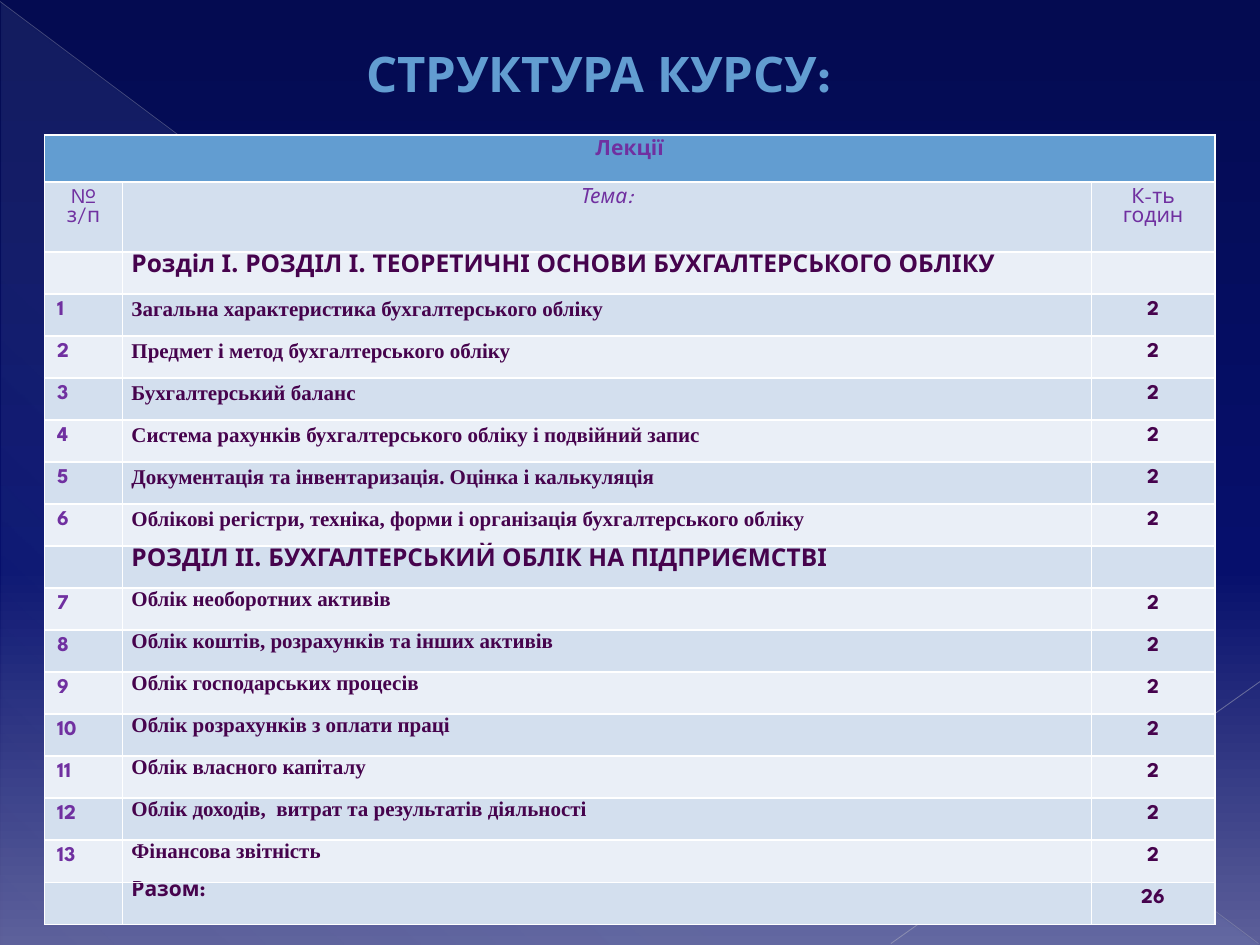
from dataclasses import dataclass
from typing import NamedTuple

from lxml.etree import SubElement
from pptx import Presentation
from pptx.dml.color import RGBColor
from pptx.enum.shapes import MSO_CONNECTOR, MSO_SHAPE
from pptx.enum.text import MSO_ANCHOR, MSO_AUTO_SIZE, PP_ALIGN
from pptx.oxml.ns import qn
from pptx.util import Cm, Pt


@dataclass(frozen=True)
class Theme:
    heading_font: str = "League Spartan"
    topic_font: str = "Times New Roman"
    title_size: float = 28
    section_size: float = 14
    body_size: float = 12
    accent: str = "629DD1"
    label: str = "7030A0"
    ink: str = "46034D"
    band_dark: str = "D3DFEE"
    band_light: str = "EAEFF7"
    border: str = "FFFFFF"


class Stop(NamedTuple):
    position: int
    color: str
    opacity: int = 100


class Ray(NamedTuple):
    start: tuple[float, float]
    end: tuple[float, float]
    color: str
    width: float
    opacity: int


class Lecture(NamedTuple):
    number: str
    topic: str
    hours: str = "2"


THEME = Theme()
SECTION_ONE = "Розділ І. РОЗДІЛ І. ТЕОРЕТИЧНІ ОСНОВИ БУХГАЛТЕРСЬКОГО ОБЛІКУ"
SECTION_TWO = "РОЗДІЛ ІІ. БУХГАЛТЕРСЬКИЙ ОБЛІК НА ПІДПРИЄМСТВІ"
TOPICS_ONE = [
    "Загальна характеристика бухгалтерського обліку",
    "Предмет і метод бухгалтерського обліку",
    "Бухгалтерський баланс",
    "Система рахунків бухгалтерського обліку і подвійний запис",
    "Документація та інвентаризація. Оцінка і калькуляція",
    "Облікові регістри, техніка, форми і організація бухгалтерського обліку",
]
TOPICS_TWO = [
    "Облік необоротних активів",
    "Облік коштів, розрахунків та інших активів",
    "Облік господарських процесів",
    "Облік розрахунків з оплати праці",
    "Облік власного капіталу",
    "Облік доходів,  витрат та результатів діяльності",
    "Фінансова звітність",
]
BACKDROP = [Stop(0, "040B51"), Stop(60, "060F6C"), Stop(100, "5C5F99")]
GLOW = [Stop(0, "ACCBF9", 10), Stop(70, "ACCBF9", 8), Stop(100, "ACCBF9", 1)]
RAYS = [
    Ray((0, 0.03), (25.37, 19.02), "B2B3BE", 0.39, 35),
    Ray((25.4, 13.74), (17.96, 19.02), "BBBCC5", 0.47, 45),
]
COLUMN_WIDTHS = [1.57, 19.53, 2.49]
HEADER_HEIGHTS = [0.95, 1.41]
TABLE_HEIGHT = 15.92


def write(frame, text: str, *, size: float = THEME.body_size, color: str = THEME.ink,
          font: str = THEME.heading_font, bold: bool = True, italic: bool = False,
          align=PP_ALIGN.LEFT, spacing: float | None = None) -> None:
    para = frame.paragraphs[0]
    para.alignment = align
    para.line_spacing = spacing
    span = para.add_run()
    span.text = text
    span.font.name, span.font.size = font, Pt(size)
    span.font.bold, span.font.italic = bold, italic
    span.font.color.rgb = RGBColor.from_string(color)


def add_alpha(color_element, opacity: int) -> None:
    SubElement(color_element, qn("a:alpha"), val=str(opacity * 1000))


def paint_gradient(owner, fill, stops: list[Stop], angle: int) -> None:
    """Give the fill found inside the owner element any number of stops."""
    fill.gradient()
    gradient = next(owner.iter(qn("a:gradFill")))
    stop_list = gradient.find(qn("a:gsLst"))
    for old_stop in list(stop_list):
        stop_list.remove(old_stop)
    for stop in stops:
        node = SubElement(stop_list, qn("a:gs"), pos=str(stop.position * 1000))
        color = SubElement(node, qn("a:srgbClr"), val=stop.color)
        if stop.opacity < 100:
            add_alpha(color, stop.opacity)
    gradient.find(qn("a:lin")).set("ang", str(angle * 60000))


def draw_backdrop(page) -> None:
    paint_gradient(page._element, page.background.fill, BACKDROP, 90)
    triangle = page.shapes.add_shape(
        MSO_SHAPE.RIGHT_TRIANGLE, Cm(0.03), Cm(0.05), Cm(25.35), Cm(19))
    triangle.shadow.inherit = False
    triangle.line.fill.background()
    paint_gradient(triangle._element.spPr, triangle.fill, GLOW, 133)
    for ray in RAYS:
        line = page.shapes.add_connector(
            MSO_CONNECTOR.STRAIGHT, *map(Cm, ray.start + ray.end))
        line.line.width = Pt(ray.width)
        line.line.color.rgb = RGBColor.from_string(ray.color)
        add_alpha(next(line._element.spPr.iter(qn("a:srgbClr"))), ray.opacity)
        SubElement(line._element.spPr, qn("a:effectLst"))


def draw_title(page) -> None:
    title = page.shapes.title
    title.left, title.top, title.width, title.height = Cm(5.72), Cm(0.74), Cm(12.7), Cm(1.45)
    frame = title.text_frame
    frame.auto_size = MSO_AUTO_SIZE.NONE
    frame.vertical_anchor = MSO_ANCHOR.BOTTOM
    write(frame, "СТРУКТУРА КУРСУ:", size=THEME.title_size, color=THEME.accent,
          align=PP_ALIGN.CENTER)
    page.shapes._spTree.append(title._element)


def style_cell(cell, fill: str) -> None:
    properties = cell._tc.get_or_add_tcPr()
    for side in ("lnL", "lnR", "lnT", "lnB"):
        border = SubElement(properties, qn(f"a:{side}"), w=str(Pt(1)))
        SubElement(SubElement(border, qn("a:solidFill")), qn("a:srgbClr"), val=THEME.border)
    cell.fill.solid()
    cell.fill.fore_color.rgb = RGBColor.from_string(fill)


def set_margins(cell, side: float) -> None:
    cell.margin_left = cell.margin_right = Cm(side)
    cell.margin_top = cell.margin_bottom = 0


def fill_row(cells, lecture: Lecture, **topic_format) -> None:
    number, topic, hours = cells
    set_margins(topic, 0.18)
    write(topic.text_frame, lecture.topic, **topic_format)
    for cell, text, color, align in (
            (number, lecture.number, THEME.label, PP_ALIGN.LEFT),
            (hours, lecture.hours, THEME.ink, PP_ALIGN.CENTER)):
        if text:
            write(cell.text_frame, text, color=color, align=align)
        else:
            set_margins(cell, 0)


def draw_table(page) -> None:
    section = dict(size=THEME.section_size, spacing=1.15)
    rows = [(Lecture("", SECTION_ONE, ""), section)]
    for number, topic in enumerate(TOPICS_ONE + TOPICS_TWO, 1):
        in_first = number <= len(TOPICS_ONE)
        rows.append((Lecture(str(number), topic),
                     dict(font=THEME.topic_font, spacing=1.15 if in_first else None)))
        if number == len(TOPICS_ONE):
            rows.append((Lecture("", SECTION_TWO, ""), section))
    rows.append((Lecture("", "Разом:", "26"), {}))

    row_height = (TABLE_HEIGHT - sum(HEADER_HEIGHTS)) / len(rows)
    heights = HEADER_HEIGHTS + [row_height] * len(rows)
    table = page.shapes.add_table(
        len(heights), len(COLUMN_WIDTHS), Cm(0.9), Cm(2.72),
        Cm(sum(COLUMN_WIDTHS)), Cm(TABLE_HEIGHT)).table
    for column, width in zip(table.columns, COLUMN_WIDTHS):
        column.width = Cm(width)
    for index, (row, height) in enumerate(zip(table.rows, heights)):
        row.height = Cm(height)
        band = THEME.band_dark if index % 2 else THEME.band_light
        for cell in row.cells:
            style_cell(cell, band if index else THEME.accent)

    table.cell(0, 0).merge(table.cell(0, 2))
    header = dict(color=THEME.label, align=PP_ALIGN.CENTER)
    write(table.cell(0, 0).text_frame, "Лекції", **header)
    for column, text in enumerate(["№ з/п", "Тема:", "К-ть годин"]):
        write(table.cell(1, column).text_frame, text, bold=False, italic=column == 1, **header)
    for index, (lecture, topic_format) in enumerate(rows, len(HEADER_HEIGHTS)):
        fill_row(table.rows[index].cells, lecture, **topic_format)


def main() -> None:
    deck = Presentation()
    deck.slide_width, deck.slide_height = Cm(25.4), Cm(19.05)
    page = deck.slides.add_slide(deck.slide_layouts[5])
    draw_backdrop(page)
    draw_title(page)
    draw_table(page)
    deck.save("out.pptx")


if __name__ == "__main__":
    main()
